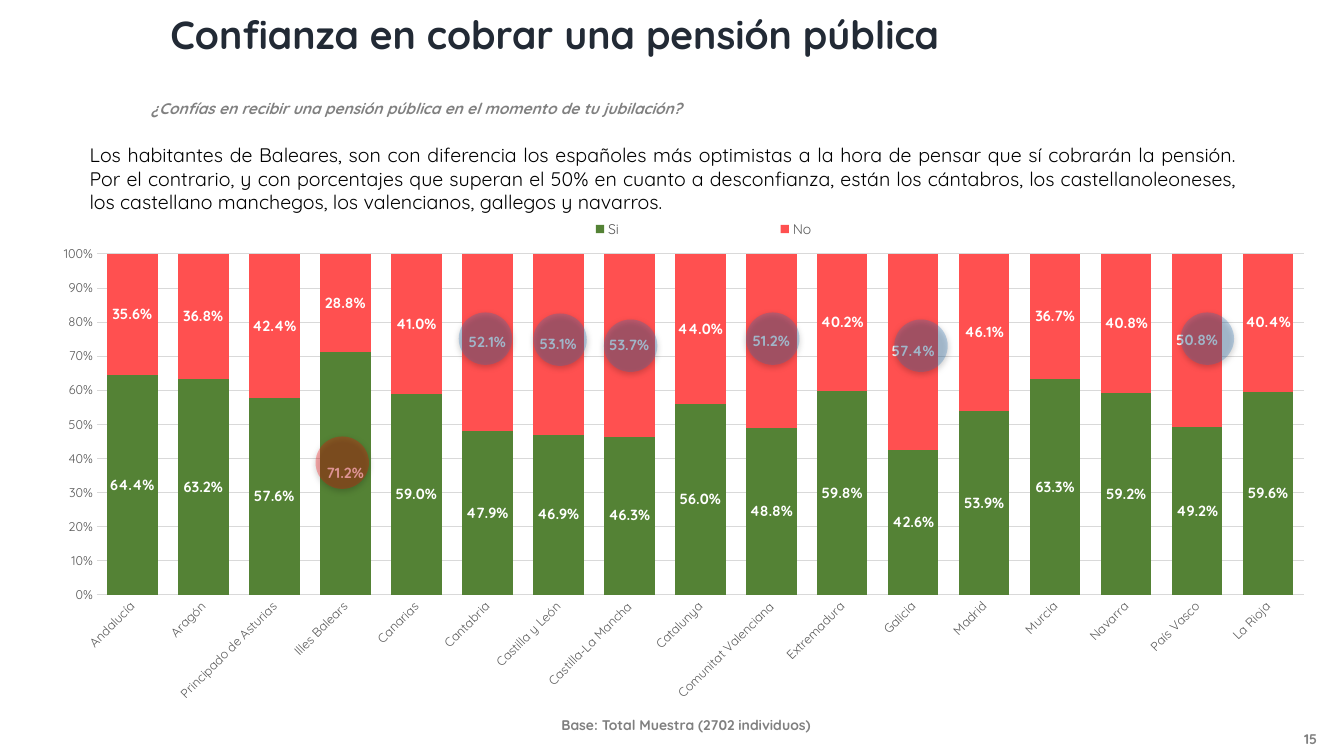
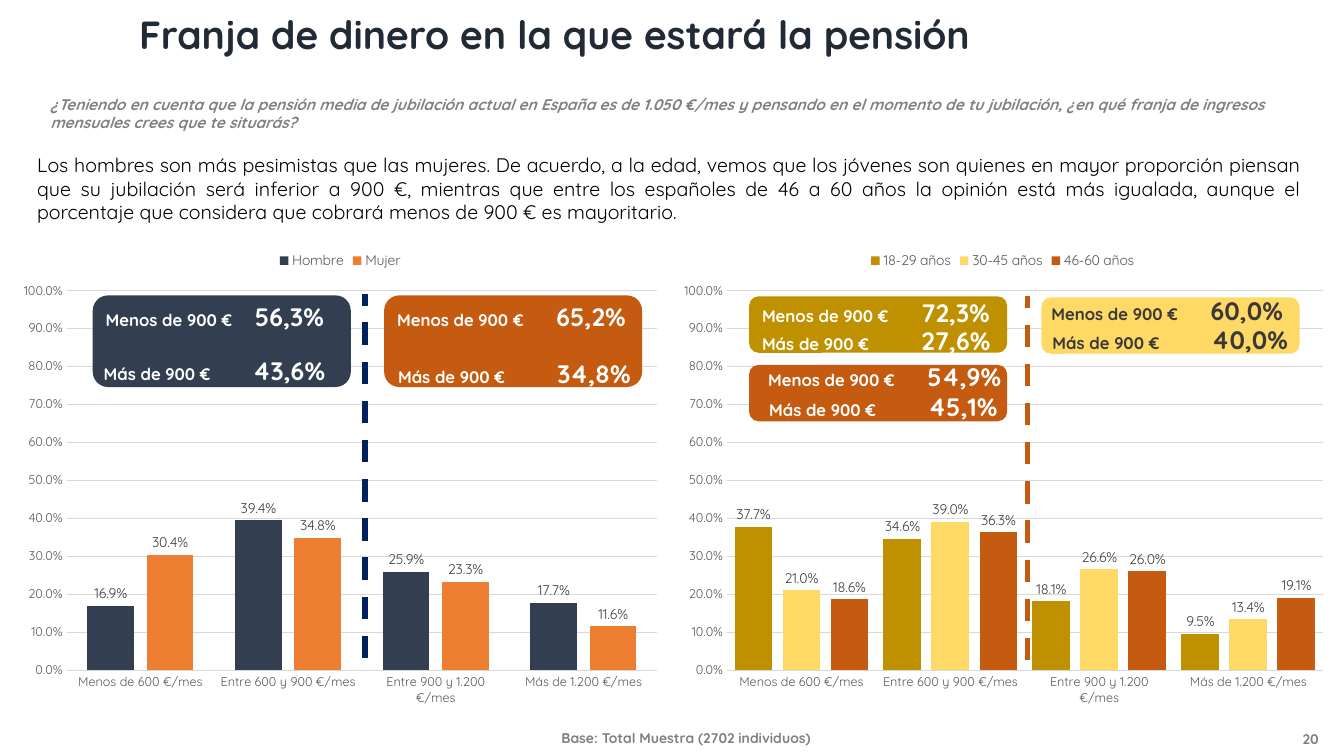
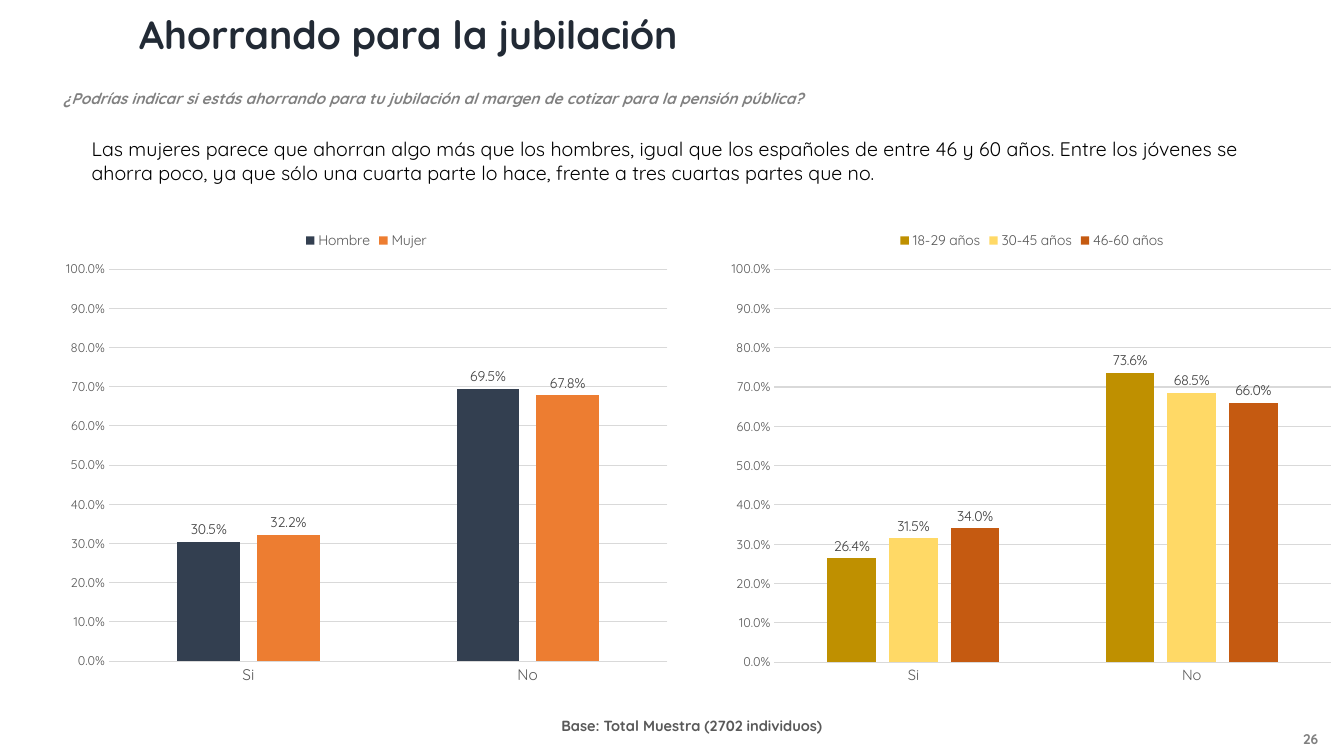
from dataclasses import dataclass

from lxml import etree
from pptx import Presentation
from pptx.chart.data import CategoryChartData
from pptx.dml.color import RGBColor
from pptx.enum.chart import XL_CHART_TYPE, XL_LABEL_POSITION, XL_LEGEND_POSITION, XL_TICK_MARK
from pptx.enum.dml import MSO_LINE
from pptx.enum.shapes import MSO_CONNECTOR, MSO_SHAPE
from pptx.enum.text import MSO_ANCHOR, MSO_AUTO_SIZE, PP_ALIGN
from pptx.oxml import parse_xml
from pptx.oxml.ns import nsdecls, qn
from pptx.util import Inches, Pt


@dataclass(frozen=True)
class Theme:
    font: str = "Quicksand"
    title: str = "222A35"
    muted: str = "808080"
    axis: str = "595959"
    grid: str = "D9D9D9"
    label: str = "404040"
    black: str = "000000"
    white: str = "FFFFFF"
    charcoal: str = "3B3838"
    green: str = "548235"
    red: str = "FF5050"
    navy: str = "333F50"
    orange: str = "ED7D31"
    gold: str = "BF9000"
    yellow: str = "FFD966"
    rust: str = "C55A11"
    divider: str = "002060"
    high_mark: str = "2E75B6"
    low_mark: str = "FF0000"
    title_size: float = 28
    figure_size: float = 18
    body_size: float = 14
    card_size: float = 12
    question_size: float = 11
    label_size: float = 10
    stacked_label_size: float = 10.5
    tick_size: float = 9


T = Theme()


def write(sp, text, size, color, bold=True, italic=False, align=PP_ALIGN.LEFT, font=T.font):
    """Append one run to the first paragraph of a shape."""
    tf = sp.text_frame
    tf.word_wrap = True
    p = tf.paragraphs[0]
    p.alignment = align
    r = p.add_run()
    r.text = text
    r.font.name = font
    r.font.size = Pt(size)
    r.font.bold = bold
    r.font.italic = italic
    r.font.color.rgb = RGBColor.from_string(color)


def add_bars(slide, box, plot_box, cats, series, gap, cat_size=T.tick_size, stacked=False):
    """Add a column chart; plot_box gives the plot's left, top, right and bottom on the slide."""
    data = CategoryChartData(number_format="0.0%")
    data.categories = cats
    for name, _, values in series:
        data.add_series(name, values)
    kind = XL_CHART_TYPE.COLUMN_STACKED_100 if stacked else XL_CHART_TYPE.COLUMN_CLUSTERED
    chart = slide.shapes.add_chart(kind, *map(Inches, box), data).chart
    chart.has_title = False
    chart.font.name = T.font
    chart.font.size = Pt(T.label_size)
    chart.has_legend = True
    chart.legend.position = XL_LEGEND_POSITION.TOP
    chart.legend.include_in_layout = False

    cat_axis, val_axis = chart.category_axis, chart.value_axis
    for axis, size in ((cat_axis, cat_size), (val_axis, T.tick_size)):
        axis.major_tick_mark = axis.minor_tick_mark = XL_TICK_MARK.NONE
        axis.tick_labels.font.size = Pt(size)
    val_axis.minimum_scale, val_axis.maximum_scale, val_axis.major_unit = 0, 1, 0.1
    val_axis.tick_labels.number_format = "0%" if stacked else "0.0%"
    val_axis.tick_labels.number_format_is_linked = False
    val_axis.format.line.fill.background()
    for line in (cat_axis.format.line, val_axis.major_gridlines.format.line):
        line.color.rgb = RGBColor.from_string(T.grid)
        line.width = Pt(0.75)
    for font in (chart.legend.font, cat_axis.tick_labels.font, val_axis.tick_labels.font):
        font.name = T.font
        font.color.rgb = RGBColor.from_string(T.axis)
    chart.legend.font.size = Pt(T.label_size)

    plot = chart.plots[0]
    plot.vary_by_categories = False
    plot.gap_width = gap
    plot.overlap = 100 if stacked else -27
    for ser, (_, color, _) in zip(plot.series, series):
        ser.format.fill.solid()
        ser.format.fill.fore_color.rgb = RGBColor.from_string(color)
        ser.invert_if_negative = False
        labels = ser.data_labels
        labels.show_value = True
        labels.number_format = "0.0%"
        labels.number_format_is_linked = False
        labels.position = XL_LABEL_POSITION.CENTER if stacked else XL_LABEL_POSITION.OUTSIDE_END
        labels.font.name = T.font
        labels.font.bold = stacked
        labels.font.size = Pt(T.stacked_label_size if stacked else T.label_size)
        labels.font.color.rgb = RGBColor.from_string(T.white if stacked else T.label)

    x, y, w, h = box
    left, top, right, bottom = plot_box
    area = chart._chartSpace.chart.plotArea
    for old in area.findall(qn("c:layout")):
        area.remove(old)
    area.insert(0, parse_xml(
        f'<c:layout {nsdecls("c")}><c:manualLayout><c:layoutTarget val="inner"/>'
        '<c:xMode val="edge"/><c:yMode val="edge"/>'
        f'<c:x val="{(left - x) / w:.4f}"/><c:y val="{(top - y) / h:.4f}"/>'
        f'<c:w val="{(right - left) / w:.4f}"/><c:h val="{(bottom - top) / h:.4f}"/>'
        '</c:manualLayout></c:layout>'))
    return chart


prs = Presentation()
prs.slide_width, prs.slide_height = Inches(13.33), Inches(7.5)

# Boxes are left, top, width, height in inches
pages = [
    dict(number="15", title="Confianza en cobrar una pensión pública", title_left=1.59,
         question="¿Confías en recibir una pensión pública en el momento de tu jubilación?",
         question_box=(1.4, 0.93, 6, 0.29), base_top=7.06, base_size=10, base_color=T.muted,
         body="Los habitantes de Baleares, son con diferencia los españoles más optimistas a la hora "
              "de pensar que sí cobrarán la pensión. Por el contrario, y con porcentajes que superan "
              "el 50% en cuanto a desconfianza, están los cántabros, los castellanoleoneses, los "
              "castellano manchegos, los valencianos, gallegos y navarros.",
         body_box=(0.79, 1.37, 11.58, 0.81)),
    dict(number="20", title="Franja de dinero en la que estará la pensión", title_left=1.28,
         question="¿Teniendo en cuenta que la pensión media de jubilación actual en España es de "
                  "1.050 €/mes y pensando en el momento de tu jubilación, ¿en qué franja de ingresos "
                  "mensuales crees que te situarás?",
         question_box=(0.4, 0.89, 12.72, 0.47), base_top=7.19, base_size=10, base_color=T.muted,
         body="Los hombres son más pesimistas que las mujeres. De acuerdo, a la edad, vemos que los "
              "jóvenes son quienes en mayor proporción piensan que su jubilación será inferior a "
              "900 €, mientras que entre los españoles de 46 a 60 años la opinión está más igualada, "
              "aunque el porcentaje que considera que cobrará menos de 900 € es mayoritario.",
         body_box=(0.27, 1.47, 12.74, 0.81)),
    dict(number="26", title="Ahorrando para la jubilación", title_left=1.28,
         question="¿Podrías indicar si estás ahorrando para tu jubilación al margen de cotizar para "
                  "la pensión pública?",
         question_box=(0.53, 0.83, 8, 0.29), base_top=7.06, base_size=10.5, base_color=T.axis,
         body="Las mujeres parece que ahorran algo más que los hombres, igual que los españoles de "
              "entre 46 y 60 años. Entre los jóvenes se ahorra poco, ya que sólo una cuarta parte lo "
              "hace, frente a tres cuartas partes que no.",
         body_box=(0.81, 1.31, 11.58, 0.57)),
]

slides = []
for page in pages:
    s = prs.slides.add_slide(prs.slide_layouts[5])
    slides.append(s)
    title = s.shapes.title
    title.left, title.top, title.width, title.height = map(Inches, (page["title_left"], 0.05, 9, 0.57))
    title.text_frame.auto_size = MSO_AUTO_SIZE.NONE
    title.text_frame.vertical_anchor = MSO_ANCHOR.TOP
    write(title, page["title"], T.title_size, T.title)

    question = s.shapes.add_textbox(*map(Inches, page["question_box"]))
    write(question, page["question"], T.question_size, T.muted, italic=True)
    body = s.shapes.add_textbox(*map(Inches, page["body_box"]))
    write(body, page["body"], T.body_size, T.black, bold=False, align=PP_ALIGN.JUSTIFY)
    base = s.shapes.add_textbox(*map(Inches, (5.47, page["base_top"], 3.2, 0.27)))
    write(base, "Base: Total Muestra (2702 individuos)", page["base_size"], page["base_color"])
    number = s.shapes.add_textbox(*map(Inches, (12.66, 7.17, 0.68, 0.33)))
    number.text_frame.vertical_anchor = MSO_ANCHOR.MIDDLE
    write(number, page["number"], T.label_size, T.muted, align=PP_ALIGN.CENTER)

trust, income, saving = slides

# Trust by region
regions = {
    "Andalucía": 0.644, "Aragón": 0.632, "Principado de Asturias": 0.576, "Illes Balears": 0.712,
    "Canarias": 0.59, "Cantabria": 0.479, "Castilla y León": 0.469, "Castilla-La Mancha": 0.463,
    "Catalunya": 0.56, "Comunitat Valenciana": 0.488, "Extremadura": 0.598, "Galicia": 0.426,
    "Madrid": 0.539, "Murcia": 0.633, "Navarra": 0.592, "País Vasco": 0.492, "La Rioja": 0.596,
}
yes = list(regions.values())
no = [round(1 - v, 3) for v in yes]
chart = add_bars(trust, (0.38, 2.02, 12.81, 5.04), (0.96, 2.52, 12.93, 5.9), list(regions),
                 [("Si", T.green, yes), ("No", T.red, no)], gap=40, stacked=True)
chart.category_axis._element.find(qn("c:txPr")).find(qn("a:bodyPr")).set("rot", "-2700000")
legend = chart.legend._element
for old in legend.findall(qn("c:layout")):
    legend.remove(old)
legend.find(qn("c:legendPos")).addnext(parse_xml(
    f'<c:layout {nsdecls("c")}><c:manualLayout><c:xMode val="edge"/><c:yMode val="edge"/>'
    '<c:x val="0.31"/><c:y val="0.02"/><c:w val="0.41"/><c:h val="0.06"/>'
    '</c:manualLayout></c:layout>'))

marks = [(3.13, 4.33, T.low_mark)] + [
    (x, y, T.high_mark) for x, y in
    ((4.55, 3.1), (5.29, 3.11), (5.99, 3.17), (7.4, 3.1), (8.87, 3.17), (11.71, 3.1))]
for x, y, color in marks:
    mark = trust.shapes.add_shape(MSO_SHAPE.OVAL, *map(Inches, (x, y, 0.53, 0.52)))
    mark.fill.solid()
    mark.fill.fore_color.rgb = RGBColor.from_string(color)
    mark.line.fill.background()
    rgb = mark._element.spPr.find(qn("a:solidFill"))[0]
    etree.SubElement(rgb, qn("a:alpha")).set("val", "29000")
    mark._element.spPr.append(parse_xml(
        f'<a:effectLst {nsdecls("a")}><a:outerShdw blurRad="{Pt(4.5)}" dist="{Pt(1.5)}" '
        'dir="5400000" rotWithShape="0"><a:srgbClr val="000000"><a:alpha val="63000"/>'
        '</a:srgbClr></a:outerShdw></a:effectLst>'))

# Expected income and savings, each by sex and by age
genders = (("Hombre", T.navy), ("Mujer", T.orange))
ages = (("18-29 años", T.gold), ("30-45 años", T.yellow), ("46-60 años", T.rust))
bands = ["Menos de 600 €/mes", "Entre 600 y 900 €/mes", "Entre 900 y 1.200 €/mes", "Más de 1.200 €/mes"]
answers = ["Si", "No"]
panels = [
    (income, (0.1, 2.39, 6.55, 4.71), (0.66, 2.88, 6.52, 6.65), bands, genders, 89, 9,
     [(0.169, 0.394, 0.259, 0.177), (0.304, 0.348, 0.233, 0.116)]),
    (income, (6.65, 2.39, 6.59, 4.71), (7.21, 2.88, 13.12, 6.65), bands, ages, 40, 9,
     [(0.377, 0.346, 0.181, 0.095), (0.21, 0.39, 0.266, 0.134), (0.186, 0.363, 0.26, 0.191)]),
    (saving, (0.53, 2.19, 6.21, 4.71), (1.08, 2.67, 6.62, 6.56), answers, genders, 219, 11,
     [(0.305, 0.695), (0.322, 0.678)]),
    (saving, (7.13, 2.19, 6.21, 4.71), (7.68, 2.67, 13.2, 6.57), answers, ages, 219, 10.5,
     [(0.264, 0.736), (0.315, 0.685), (0.34, 0.66)]),
]
for s, box, plot_box, cats, groups, gap, cat_size, values in panels:
    series = [(name, color, vals) for (name, color), vals in zip(groups, values)]
    add_bars(s, box, plot_box, cats, series, gap, cat_size)

# Dividers between the bands under and over 900 €
for x, top, bottom, color in ((3.62, 2.92, 6.53, T.divider), (10.19, 2.94, 6.55, T.rust)):
    divider = income.shapes.add_connector(MSO_CONNECTOR.STRAIGHT, *map(Inches, (x, bottom, x, top)))
    divider.line.color.rgb = RGBColor.from_string(color)
    divider.line.width = Pt(4)
    divider.line.dash_style = MSO_LINE.DASH
    etree.SubElement(divider._element.spPr, qn("a:effectLst"))

# Cards: left, top, height, fill, text colour, tab, then left, top and figure of both rows
cards = [
    (0.92, 2.93, 0.91, T.navy, T.white, 1.48, ((0.95, 2.94, "56,3%"), (0.93, 3.48, "43,6%"))),
    (3.81, 2.93, 0.91, T.rust, T.white, 1.58, ((3.84, 2.94, "65,2%"), (3.85, 3.51, "34,8%"))),
    (7.43, 2.94, 0.56, T.gold, T.white, 1.58, ((7.46, 2.9, "72,3%"), (7.46, 3.18, "27,6%"))),
    (7.43, 3.62, 0.56, T.rust, T.white, 1.58, ((7.52, 3.54, "54,9%"), (7.53, 3.83, "45,1%"))),
    (10.33, 2.95, 0.56, T.yellow, T.charcoal, 1.58, ((10.33, 2.88, "60,0%"), (10.34, 3.17, "40,0%"))),
]
for left, top, height, fill, color, tab, rows in cards:
    card = income.shapes.add_shape(MSO_SHAPE.ROUNDED_RECTANGLE, *map(Inches, (left, top, 2.56, height)))
    card.shadow.inherit = False
    card.fill.solid()
    card.fill.fore_color.rgb = RGBColor.from_string(fill)
    card.line.fill.background()
    for label, (x, y, figure) in zip(("Menos de 900 €", "Más de 900 €"), rows):
        row = income.shapes.add_textbox(*map(Inches, (x, y, 2.56, 0.4)))
        tabs = etree.SubElement(row.text_frame.paragraphs[0]._p.get_or_add_pPr(), qn("a:tabLst"))
        etree.SubElement(tabs, qn("a:tab"), pos=str(Inches(tab)), algn="l")
        write(row, label + "\t", T.card_size, color)
        write(row, figure, T.figure_size, color)

prs.save("out.pptx")
